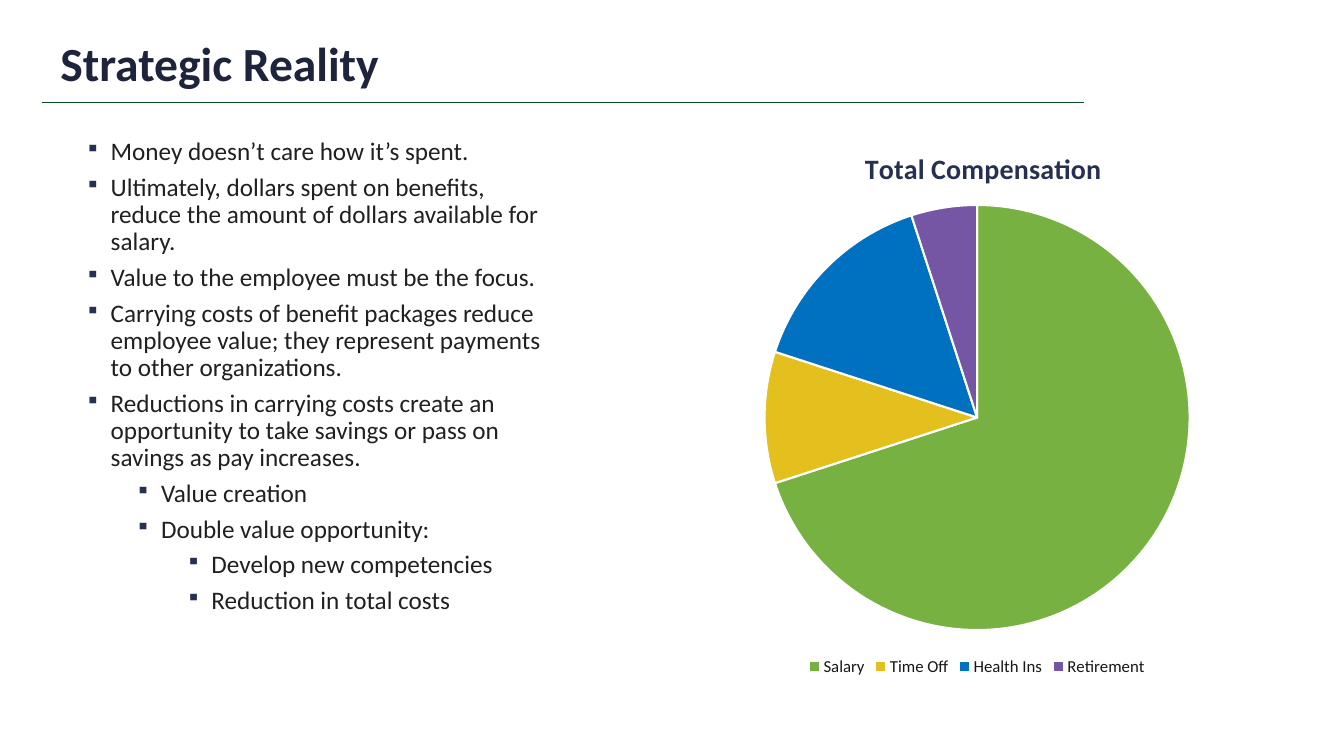
import pptx
import pptx.chart.data
import pptx.dml.color
import pptx.enum.chart
import pptx.enum.shapes
import pptx.enum.text
import pptx.oxml
import pptx.oxml.ns
import pptx.util
from lxml import etree

Cm = pptx.util.Cm
Pt = pptx.util.Pt
qn = pptx.oxml.ns.qn

TITLE = "Strategic Reality"
BULLETS = [
    (0, "Money doesn’t care how it’s spent."),
    (0, "Ultimately, dollars spent on benefits, reduce the amount of dollars available for salary."),
    (0, "Value to the employee must be the focus."),
    (0, "Carrying costs of benefit packages reduce employee value; they represent payments to other organizations."),
    (0, "Reductions in carrying costs create an opportunity to take savings or pass on savings as pay increases."),
    (1, "Value creation"),
    (1, "Double value opportunity:"),
    (2, "Develop new competencies"),
    (2, "Reduction in total costs"),
]
CHART_TITLE = "Total Compensation"
SLICES = [
    ("Salary", 70, "77B142"),
    ("Time Off", 10, "E3C01E"),
    ("Health Ins", 15, "0070C0"),
    ("Retirement", 5, "7556A4"),
]

THEME = {
    "title": {"name": "Calibri", "size": Pt(34), "bold": True, "color": "1D243C"},
    "body": {"name": "Calibri", "size": Pt(18), "bold": False, "color": "202020"},
    "chart": {"name": "Calibri", "size": Pt(10), "color": "404040"},
    "chart title": {"name": "Calibri", "size": Pt(20), "bold": True, "color": "263050"},
    "legend": {"name": "Calibri", "size": Pt(12), "bold": False, "color": "161818"},
    "bullet": "263050",
    "rule": "0A4E1F",
    "slice edge": "FFFFFF",
}

# Left, top, width and height in centimetres
TITLE_BOX = (1.27, 0.76, 26.42, 1.68)
BODY_BOX = (1.9, 3.38, 12.42, 13.77)
CHART_BOX = (15.39, 3.05, 18.47, 14.1)
RULE_LEFT, RULE_RIGHT, RULE_TOP = 1.07, 27.31, 2.59
HANGING, LEVEL_STEP = 0.64, 1.27

# Fractions of the chart frame
PIE_AREA = {"x": 0.21, "y": 0.15, "w": 0.58, "h": 0.76}
CHART_TITLE_AREA = {"x": 0.34, "y": 0.04}


def rgb(color):
    return pptx.dml.color.RGBColor.from_string(color)


def box(lengths):
    return [Cm(length) for length in lengths]


def format_font(font, style):
    for name, value in THEME[style].items():
        if name == "color":
            font.color.rgb = rgb(value)
        else:
            setattr(font, name, value)


def add_child(parent, tag, **attributes):
    child = etree.SubElement(parent, qn(tag))
    for name, value in attributes.items():
        child.set(name, str(value))
    return child


def place_in_chart(element, index, area, **modes):
    """Give a chart part a manual layout as its child at the given index."""
    for layout in element.findall(qn("c:layout")):
        element.remove(layout)
    layout = etree.Element(qn("c:layout"))
    element.insert(index, layout)
    manual = add_child(layout, "c:manualLayout")
    for name, value in modes.items():
        add_child(manual, f"c:{name}", val=value)
    for name, value in area.items():
        add_child(manual, f"c:{name}", val=value)


def add_title(slide):
    title = slide.shapes.title
    title.left, title.top, title.width, title.height = box(TITLE_BOX)
    frame = title.text_frame
    frame.text = TITLE
    frame.vertical_anchor = pptx.enum.text.MSO_ANCHOR.BOTTOM
    paragraph = frame.paragraphs[0]
    paragraph.alignment = pptx.enum.text.PP_ALIGN.LEFT
    paragraph.line_spacing = 0.9
    format_font(paragraph.runs[0].font, "title")


def add_rule(slide):
    rule = slide.shapes.add_connector(
        pptx.enum.shapes.MSO_CONNECTOR.STRAIGHT,
        Cm(RULE_LEFT), Cm(RULE_TOP), Cm(RULE_RIGHT), Cm(RULE_TOP))
    rule.line.color.rgb = rgb(THEME["rule"])
    rule.line.width = Pt(1)
    add_child(rule._element.spPr, "a:effectLst")


def add_bullets(slide):
    frame = slide.shapes.add_textbox(*box(BODY_BOX)).text_frame
    frame.word_wrap = True
    for index, (level, text) in enumerate(BULLETS):
        paragraph = frame.add_paragraph() if index else frame.paragraphs[0]
        properties = paragraph._p.get_or_add_pPr()
        properties.set("marL", str(Cm(HANGING + level * LEVEL_STEP)))
        properties.set("indent", str(-Cm(HANGING)))
        bullet_color = add_child(properties, "a:buClr")
        add_child(bullet_color, "a:srgbClr", val=THEME["bullet"])
        add_child(properties, "a:buSzPct", val=80000)
        add_child(properties, "a:buChar", char="▪")
        paragraph.level = level
        paragraph.line_spacing = 0.9
        paragraph.space_after = Pt(6)
        run = paragraph.add_run()
        run.text = text
        format_font(run.font, "body")


def add_compensation_chart(slide):
    data = pptx.chart.data.CategoryChartData()
    data.categories = [name for name, value, color in SLICES]
    data.add_series("Series 1", [value for name, value, color in SLICES])
    chart = slide.shapes.add_chart(
        pptx.enum.chart.XL_CHART_TYPE.PIE, *box(CHART_BOX), data).chart
    format_font(chart.font, "chart")

    chart.has_title = True
    title_frame = chart.chart_title.text_frame
    title_frame.text = CHART_TITLE
    format_font(title_frame.paragraphs[0].runs[0].font, "chart title")
    place_in_chart(chart.chart_title._element, 1, CHART_TITLE_AREA,
                   xMode="edge", yMode="edge")

    chart.has_legend = True
    chart.legend.position = pptx.enum.chart.XL_LEGEND_POSITION.BOTTOM
    chart.legend.include_in_layout = False
    format_font(chart.legend.font, "legend")

    plot = chart.plots[0]
    plot.vary_by_categories = True
    for index, (name, value, color) in enumerate(SLICES):
        slice_format = plot.series[0].points[index].format
        slice_format.fill.solid()
        slice_format.fill.fore_color.rgb = rgb(color)
        slice_format.line.color.rgb = rgb(THEME["slice edge"])
        slice_format.line.width = Pt(1.5)
    plot_area = chart._chartSpace.find(".//" + qn("c:plotArea"))
    place_in_chart(plot_area, 0, PIE_AREA,
                   layoutTarget="inner", xMode="edge", yMode="edge")


def main():
    presentation = pptx.Presentation()
    presentation.slide_width = Cm(33.87)
    presentation.slide_height = Cm(19.05)
    slide = presentation.slides.add_slide(presentation.slide_layouts[5])
    add_rule(slide)
    add_title(slide)
    add_bullets(slide)
    add_compensation_chart(slide)
    presentation.save("out.pptx")


if __name__ == "__main__":
    main()
